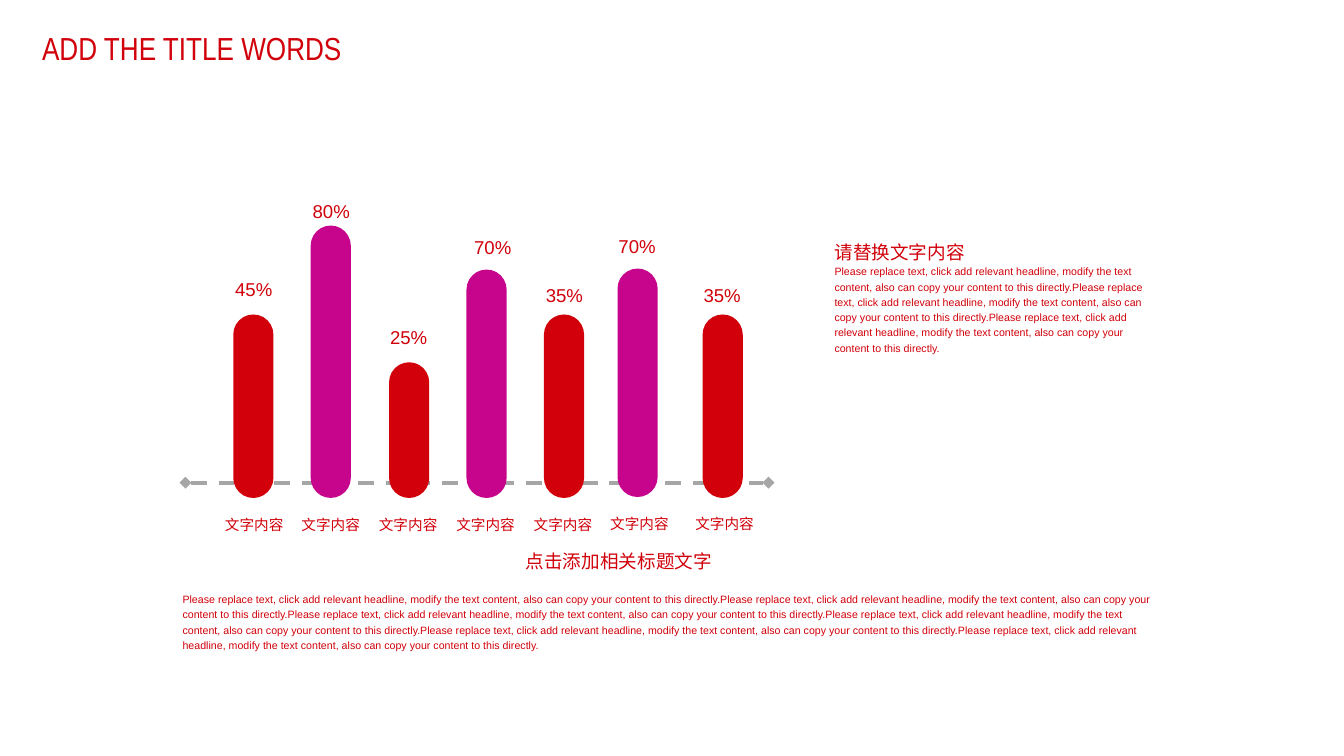
from lxml import etree
from pptx import Presentation
from pptx.dml.color import RGBColor
from pptx.enum.dml import MSO_LINE
from pptx.enum.shapes import MSO_CONNECTOR, MSO_SHAPE
from pptx.enum.text import MSO_ANCHOR, MSO_AUTO_SIZE, PP_ALIGN
from pptx.oxml.ns import qn
from pptx.util import Emu, Pt

STRAIGHT = MSO_CONNECTOR.STRAIGHT
ROUNDED = MSO_SHAPE.ROUNDED_RECTANGLE
DASH = MSO_LINE.DASH
TOP, MIDDLE = MSO_ANCHOR.TOP, MSO_ANCHOR.MIDDLE
LEFT, CENTER, JUSTIFY = PP_ALIGN.LEFT, PP_ALIGN.CENTER, PP_ALIGN.JUSTIFY
NO_AUTOFIT = MSO_AUTO_SIZE.NONE

EMU_PER_PX = 9144
COLORS = {"red": "D1000A", "magenta": "C7058C", "axis": "A6A6A6"}
SENTENCE = ("Please replace text, click add relevant headline, modify the text content, "
            "also can copy your content to this directly.")


def px(length):
    return Emu(length * EMU_PER_PX)


def add_text(words, left, top, width, height, size, align=LEFT, anchor=TOP):
    right, bottom = left + width, top + height
    outline = slide.shapes.build_freeform(left, top, scale=EMU_PER_PX)
    outline.add_line_segments([(right, top), (right, bottom), (left, bottom)], close=True)
    label = outline.convert_to_shape()
    label.shadow.inherit = False
    label.fill.background()
    label.line.fill.background()
    frame = label.text_frame
    frame.word_wrap = True
    frame.vertical_anchor = anchor
    frame.margin_left = frame.margin_right = frame.margin_top = frame.margin_bottom = 0
    line = frame.paragraphs[0]
    line.text = words
    line.alignment = align
    line.line_spacing = 1.2
    line.font.size = Pt(size)
    line.font.name = "Arial"
    line.font.color.rgb = RGBColor.from_string(COLORS["red"])


prs = Presentation()
prs.slide_width, prs.slide_height = px(1406), px(791)
slide = prs.slides.add_slide(prs.slide_layouts[5])

title = slide.shapes.title
title.left, title.top, title.width, title.height = px(34), px(5), px(354), px(63)
title.text_frame.auto_size = NO_AUTOFIT
title.text_frame.vertical_anchor = TOP
heading = title.text_frame.paragraphs[0]
heading.text = "ADD THE TITLE WORDS"
heading.alignment = LEFT
heading.line_spacing = 1.5
heading.font.size = Pt(24)
heading.font.name = "Arial Narrow"
heading.font.color.rgb = RGBColor.from_string(COLORS["red"])

axis = slide.shapes.add_connector(STRAIGHT, px(194), px(505), px(804), px(505))
axis.line.color.rgb = RGBColor.from_string(COLORS["axis"])
axis.line.width = Pt(3)
axis.line.dash_style = DASH
axis_line = axis.line._get_or_add_ln()
for end in ("a:headEnd", "a:tailEnd"):
    etree.SubElement(axis_line, qn(end), type="diamond")
etree.SubElement(axis._element.spPr, qn("a:effectLst"))

bars = [
    ("45%", "red", 244, 329, 192, 241, 283, 220, 537),
    ("80%", "magenta", 325, 236, 285, 322, 201, 300, 537),
    ("25%", "red", 407, 379, 142, 403, 333, 381, 537),
    ("70%", "magenta", 488, 282, 239, 491, 239, 462, 537),
    ("35%", "red", 569, 329, 192, 566, 289, 543, 537),
    ("70%", "magenta", 646, 281, 239, 642, 238, 623, 536),
    ("35%", "red", 735, 329, 192, 731, 289, 712, 536),
]
for (percent, color, bar_left, bar_top, bar_height,
     percent_left, percent_top, category_left, category_top) in bars:
    bar = slide.shapes.add_shape(ROUNDED, px(bar_left), px(bar_top), px(42), px(bar_height))
    bar.adjustments[0] = 0.5
    bar.shadow.inherit = False
    bar.fill.solid()
    bar.fill.fore_color.rgb = RGBColor.from_string(COLORS[color])
    bar.line.fill.background()
    add_text(percent, percent_left, percent_top, 49, 35, 14, CENTER, MIDDLE)
    add_text("文字内容", category_left, category_top, 92, 20, 11, CENTER, MIDDLE)

add_text("请替换文字内容", 873, 247, 160, 26, 14, JUSTIFY)
add_text(SENTENCE * 3, 873, 275, 341, 97, 8)
add_text("点击添加相关标题文字", 550, 571, 202, 26, 14, JUSTIFY)
add_text(SENTENCE * 6, 191, 618, 1024, 64, 8)

prs.save("out.pptx")
